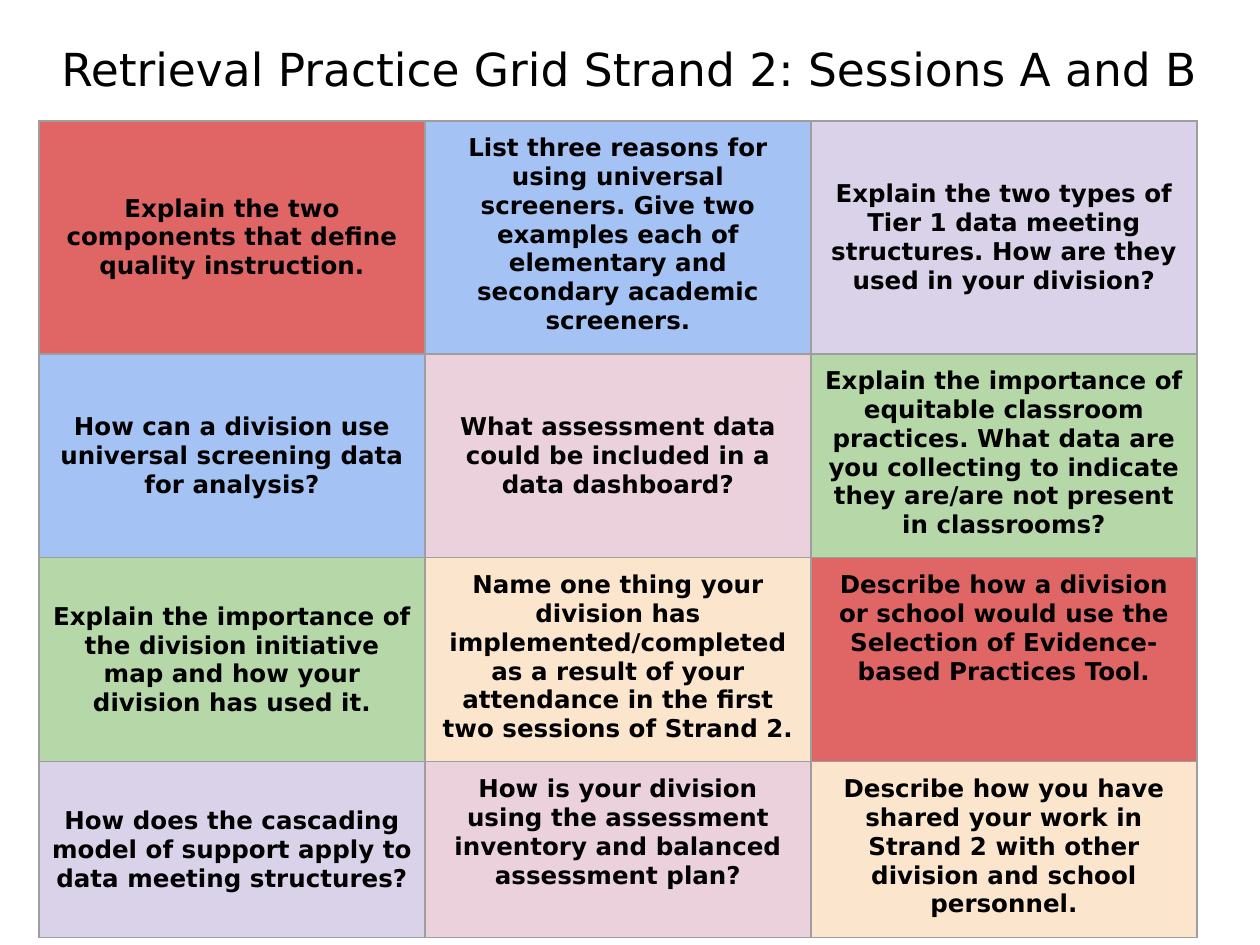
from lxml import etree
from pptx import Presentation
from pptx.dml.color import RGBColor
from pptx.enum.text import MSO_ANCHOR, PP_ALIGN
from pptx.oxml.ns import qn
from pptx.util import Pt

EMU_PER_PX = 914400 // 126
CENTER = PP_ALIGN.CENTER
TOP, MIDDLE = MSO_ANCHOR.TOP, MSO_ANCHOR.MIDDLE

RED, BLUE, LILAC = "E06666", "A4C2F4", "D9D2E9"
PINK, GREEN, CREAM = "EAD1DC", "B6D7A8", "FCE5CD"

ROW_HEIGHTS = [233, 204, 204, 176]
COLUMN_WIDTHS = [386, 386, 386]
QUESTIONS = [
    [
        ("Explain the two components that define quality instruction.", RED, MIDDLE),
        ("List three reasons for using universal screeners. Give two examples each of "
         "elementary and secondary academic screeners.", BLUE, TOP),
        ("Explain the two types of Tier 1 data meeting structures. How are they used "
         "in your division?", LILAC, MIDDLE),
    ],
    [
        ("How can a division use universal screening data for analysis?", BLUE, MIDDLE),
        ("What assessment data could be included in a data dashboard?", PINK, MIDDLE),
        ("Explain the importance of equitable classroom practices. What data are you "
         "collecting to indicate they are/are not present in classrooms?", GREEN, TOP),
    ],
    [
        ("Explain the importance of the division initiative map and how your division "
         "has used it.", GREEN, MIDDLE),
        ("Name one thing your division has implemented/completed as a result of your "
         "attendance in the first two sessions of Strand 2.", CREAM, TOP),
        ("Describe how a division or school would use the Selection of Evidence-based "
         "Practices Tool.", RED, TOP),
    ],
    [
        ("How does the cascading model of support apply to data meeting structures?",
         LILAC, MIDDLE),
        ("How is your division using the assessment inventory and balanced assessment "
         "plan?", PINK, TOP),
        ("Describe how you have shared your work in Strand 2 with other division and "
         "school personnel.", CREAM, TOP),
    ],
]


def px(length):
    return length * EMU_PER_PX


def color(value):
    return RGBColor.from_string(value)


def set_values(target, values):
    for name, value in values.items():
        setattr(target, name, value)


class SlideBuilder:
    """Holds the style and the current slide."""

    font_name = "DejaVu Sans"
    text_color = "000000"
    border_color = "9E9E9E"
    border_width = Pt(0.75)
    margins = {f"margin_{side}": px(13) for side in ("left", "top", "right", "bottom")}

    def __init__(self, slide):
        self.slide = slide

    def add_text(self, text_frame, text, size, bold=False):
        paragraph = text_frame.paragraphs[0]
        paragraph.alignment = CENTER
        run = paragraph.add_run()
        run.text = text
        set_values(run.font, {"name": self.font_name, "size": Pt(size), "bold": bold})
        run.font.color.rgb = color(self.text_color)

    def text_box(self, text, left, top, width, height, size):
        box = self.slide.shapes.add_textbox(px(left), px(top), px(width), px(height))
        set_values(box.text_frame, {"word_wrap": True, **self.margins})
        self.add_text(box.text_frame, text, size)

    def border(self, cell):
        properties = cell._tc.get_or_add_tcPr()
        for side in ("lnL", "lnR", "lnT", "lnB"):
            line = etree.SubElement(properties, qn(f"a:{side}"), w=str(self.border_width))
            fill = etree.SubElement(line, qn("a:solidFill"))
            etree.SubElement(fill, qn("a:srgbClr"), val=self.border_color)

    def table(self, rows, left, top, column_widths, row_heights, size):
        table = self.slide.shapes.add_table(
            len(rows), len(column_widths), px(left), px(top),
            px(sum(column_widths)), px(sum(row_heights)),
        ).table
        set_values(table, {"first_row": False, "horz_banding": False})
        for column, width in zip(table.columns, column_widths):
            column.width = px(width)
        for row, height, contents in zip(table.rows, row_heights, rows):
            row.height = px(height)
            for cell, (text, fill, anchor) in zip(row.cells, contents):
                set_values(cell, {"vertical_anchor": anchor, **self.margins})
                self.border(cell)
                cell.fill.solid()
                cell.fill.fore_color.rgb = color(fill)
                self.add_text(cell.text_frame, text, size, bold=True)


def main():
    presentation = Presentation()
    set_values(presentation, {"slide_width": px(1260), "slide_height": px(945)})
    slide = presentation.slides.add_slide(presentation.slide_layouts[6])
    builder = SlideBuilder(slide)
    builder.table(QUESTIONS, 39, 121, COLUMN_WIDTHS, ROW_HEIGHTS, size=14)
    builder.text_box("Retrieval Practice Grid Strand 2: Sessions A and B",
                     0, 28, 1260, 168, size=26)
    presentation.save("out.pptx")


if __name__ == "__main__":
    main()
